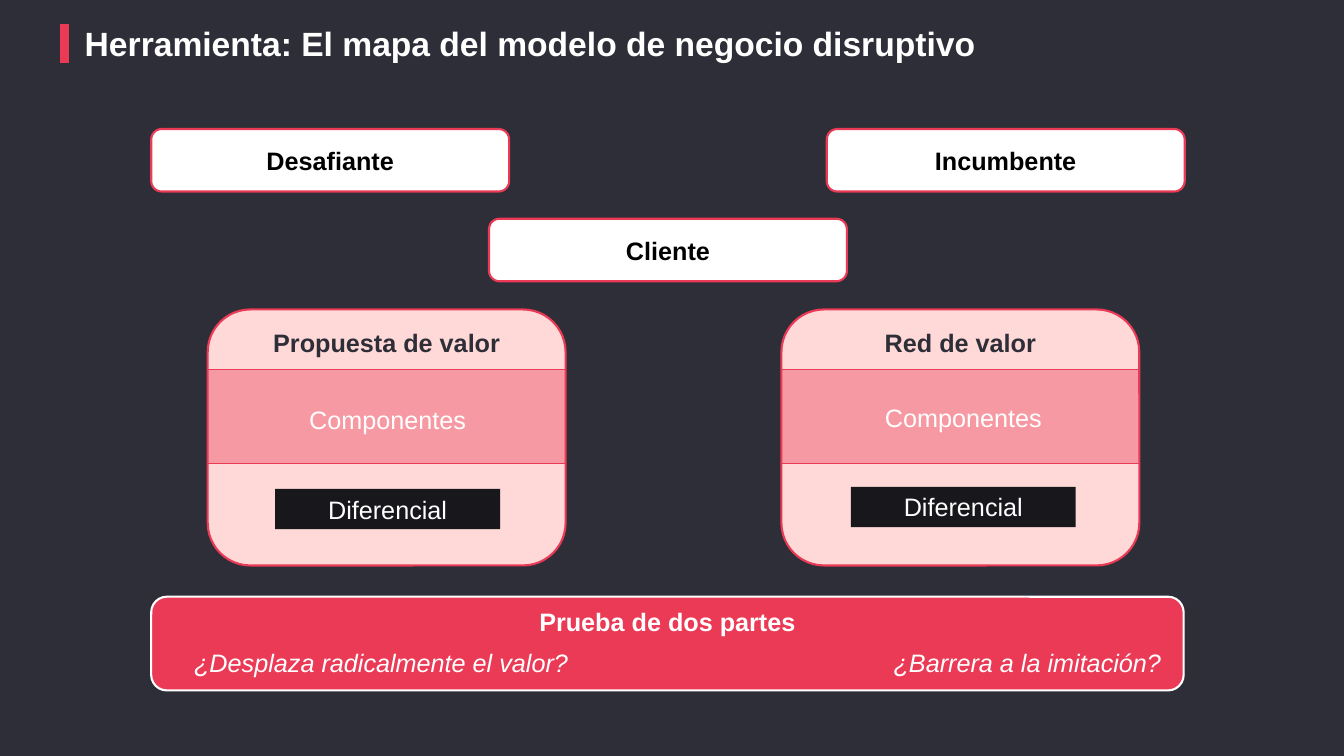
from pptx import Presentation
from pptx.dml.color import RGBColor
from pptx.enum.shapes import MSO_CONNECTOR as Connector, MSO_SHAPE as Shape
from pptx.enum.text import MSO_ANCHOR as Anchor, MSO_AUTO_SIZE as AutoSize, PP_ALIGN as Align
from pptx.oxml.ns import qn
from pptx.util import Pt
from lxml.etree import SubElement

PX = 9144  # EMU per px, 100 px to the inch
COLORS = {
    "background": "2E2E38",
    "accent": "EA3A55",
    "blush": "FFD9D7",
    "ink": "17171C",
    "white": "FFFFFF",
    "black": "000000",
}


def rgb(name):
    return RGBColor.from_string(COLORS[name])


def emu(*lengths):
    return [length * PX for length in lengths]


def write(shape, text, color="white", bold=False, italic=False, size=18,
          align=Align.CENTER, anchor=Anchor.TOP, grow=False):
    frame = shape.text_frame
    frame.word_wrap = True
    frame.vertical_anchor = anchor
    if grow:
        frame.auto_size = AutoSize.SHAPE_TO_FIT_TEXT
    paragraph = frame.paragraphs[0]
    paragraph.alignment = align
    run = paragraph.add_run()
    run.text = text
    font = run.font
    font.name, font.size = "Arial", Pt(size)
    font.bold, font.italic = bold, italic
    font.color.rgb = rgb(color)


def add_block(slide, kind, box, fill, border=None, opacity=None):
    block = slide.shapes.add_shape(kind, *emu(*box))
    block.shadow.inherit = False
    block.fill.solid()
    block.fill.fore_color.rgb = rgb(fill)
    if opacity:
        tint = block.fill._xPr.find(qn("a:solidFill"))[0]
        SubElement(tint, qn("a:alpha"), val=str(opacity * 1000))
    if border:
        block.line.color.rgb = rgb(border)
        block.line.width = Pt(1.5)
    else:
        block.line.fill.background()
    return block


def add_label(slide, box, text, **style):
    label = slide.shapes.add_textbox(*emu(*box))
    write(label, text, grow=True, **style)
    return label


def add_rule(slide, ends, width):
    rule = slide.shapes.add_connector(Connector.STRAIGHT, *emu(*ends))
    rule.line.color.rgb = rgb("accent")
    rule.line.width = Pt(width)
    SubElement(rule._element.spPr, qn("a:effectLst"))


def add_title(slide, text):
    add_rule(slide, (64, 24, 64, 63), 6)
    title = add_label(slide, (84, 25, 1062, 38), text, size=24, bold=True, align=Align.LEFT)
    frame = title.text_frame
    frame.margin_left = frame.margin_right = frame.margin_bottom = 0
    frame.margin_top = 4 * PX
    frame.paragraphs[0].line_spacing = 0.85
    frame.paragraphs[0].space_after = Pt(6)


def add_actor(slide, left, top, name):
    actor = add_block(slide, Shape.ROUNDED_RECTANGLE, (left, top, 355, 62), "white", "accent")
    write(actor, name, color="black", bold=True, anchor=Anchor.MIDDLE)


def add_value_card(slide, left, heading, inner_left, inner_top):
    card = add_block(slide, Shape.ROUNDED_RECTANGLE, (left, 307, 355, 254), "blush", "accent")
    write(card, heading, color="background", bold=True)
    for y in (367, 460):
        add_rule(slide, (left, y, left + 355, y), 0.75)
    add_block(slide, Shape.RECTANGLE, (left, 367, 355, 93), "accent", opacity=40)
    add_label(slide, (inner_left, inner_top, 223, 40), "Componentes")
    differential = add_block(slide, Shape.RECTANGLE, (inner_left, inner_top + 89, 223, 40), "ink")
    write(differential, "Diferencial", grow=True)


def main():
    deck = Presentation()
    deck.slide_width, deck.slide_height = emu(1333, 750)
    slide = deck.slides.add_slide(deck.slide_layouts[6])
    slide.background.fill.solid()
    slide.background.fill.fore_color.rgb = rgb("background")

    add_title(slide, "Herramienta: El mapa del modelo de negocio disruptivo")

    # Market actors
    add_actor(slide, 150, 128, "Desafiante")
    add_actor(slide, 820, 128, "Incumbente")
    add_actor(slide, 485, 217, "Cliente")

    # Value proposition and value network
    add_value_card(slide, 206, "Propuesta de valor", 273, 396)
    add_value_card(slide, 775, "Red de valor", 844, 394)

    # Two-part test
    test = add_block(slide, Shape.ROUNDED_RECTANGLE, (150, 592, 1024, 93), "accent", "white")
    write(test, "Prueba de dos partes", bold=True)
    add_label(slide, (159, 637, 438, 40), "¿Desplaza radicalmente el valor?", italic=True)
    add_label(slide, (863, 637, 312, 40), "¿Barrera a la imitación?", italic=True)

    deck.save("out.pptx")


if __name__ == "__main__":
    main()
